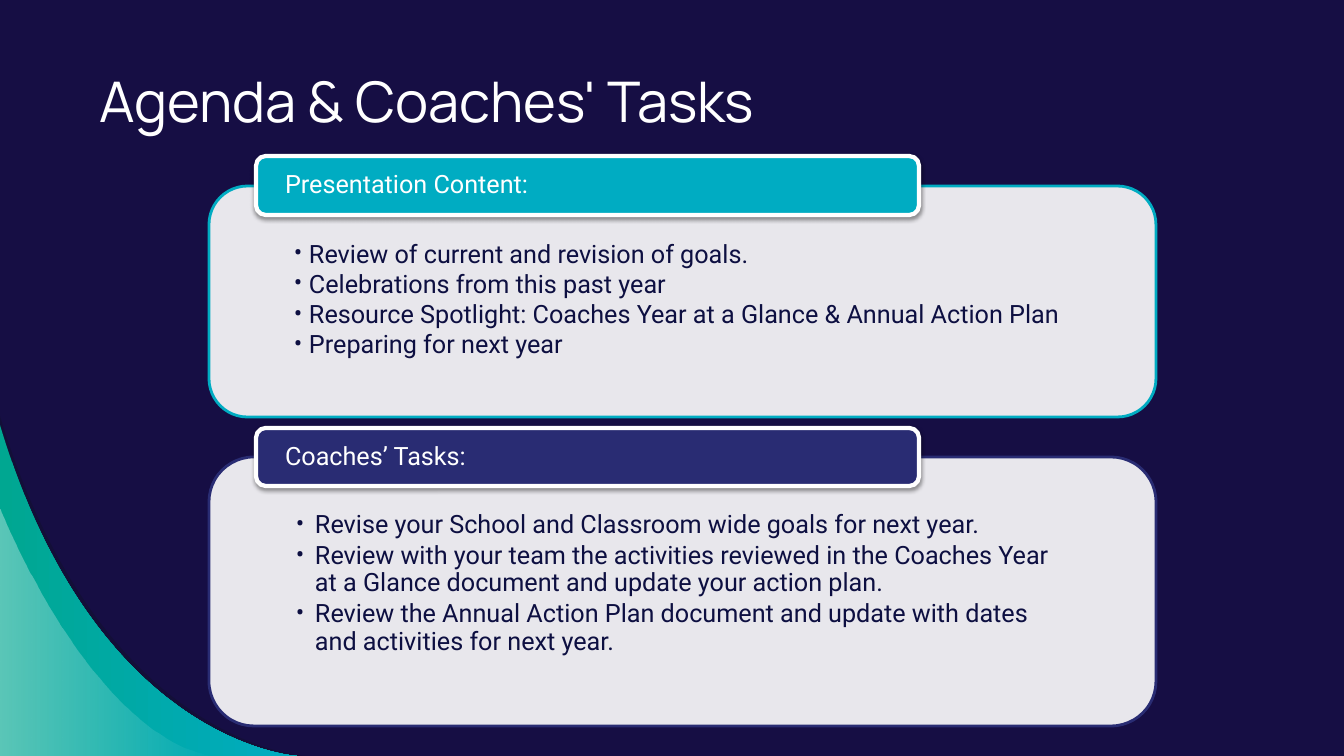
from dataclasses import dataclass
from typing import Any, NamedTuple

from lxml import etree
from pptx import Presentation
from pptx.dml.color import RGBColor
from pptx.enum.shapes import MSO_SHAPE
from pptx.enum.text import MSO_ANCHOR, PP_ALIGN
from pptx.oxml.ns import qn
from pptx.util import Emu, Pt

ROUNDED = MSO_SHAPE.ROUNDED_RECTANGLE
TOP, MIDDLE, BOTTOM = MSO_ANCHOR.TOP, MSO_ANCHOR.MIDDLE, MSO_ANCHOR.BOTTOM
LEFT = PP_ALIGN.LEFT
EMU_PER_PX = 914400 / 100.8


@dataclass(frozen=True)
class Theme:
    background: str = "160E44"
    white: str = "FFFFFF"
    ink: str = "0D0F41"
    teal: str = "00ACC2"
    green: str = "00A791"
    indigo: str = "292C73"
    shade: str = "12102F"
    black: str = "000000"
    title_font: str = "Manrope"
    body_font: str = "Roboto"
    title_size: int = 40
    body_size: int = 18
    panel_line: int = 2
    header_line: int = 3


THEME = Theme()


class Box(NamedTuple):
    left: int
    top: int
    width: int
    height: int


class Stop(NamedTuple):
    color: str
    alpha: int = 100


class Swoosh(NamedTuple):
    curve: tuple[tuple[int, int], ...]
    stops: tuple[Stop, ...]


class TextStyle(NamedTuple):
    font: str
    size: int
    color: str
    insets: tuple[int, int, int, int]
    anchor: Any
    spacing: float = 1.0
    after: float = 0
    hanging: int = 0


class Panel(NamedTuple):
    accent: str
    frame: Box
    header: Box
    heading: str
    header_text: Box
    body_text: Box
    body_style: TextStyle
    items: tuple[str, ...]


TITLE = TextStyle(THEME.title_font, THEME.title_size, THEME.white, (10, 10, 10, 10), BOTTOM)
HEADING = TextStyle(THEME.body_font, THEME.body_size, THEME.white, (25, 0, 25, 0), MIDDLE, 0.9)
CONTENT = TextStyle(THEME.body_font, THEME.body_size, THEME.ink, (73, 41, 73, 14), TOP, hanging=15)
TASKS = CONTENT._replace(spacing=0.9, after=2.7, hanging=19)

SWOOSHES = (
    Swoosh(((0, 416), (99, 745), (305, 756), (305, 756)), (Stop(THEME.shade, 54),)),
    Swoosh(((0, 425), (96, 745), (297, 756), (297, 756)), (Stop(THEME.green), Stop(THEME.teal))),
    Swoosh(((0, 510), (0, 510), (92, 741), (218, 756)), (Stop(THEME.white, 36), Stop(THEME.white, 0))),
)

PANELS = (
    Panel(
        THEME.teal, Box(209, 186, 947, 231), Box(256, 156, 663, 59),
        "Presentation Content:", Box(260, 159, 657, 53), Box(221, 197, 924, 209), CONTENT,
        (
            "Review of current and revision of goals.",
            "Celebrations from this past year",
            "Resource Spotlight: Coaches Year at a Glance & Annual Action Plan",
            "Preparing for next year",
        ),
    ),
    Panel(
        THEME.indigo, Box(209, 457, 947, 269), Box(256, 428, 663, 58),
        "Coaches’ Tasks:", Box(260, 431, 657, 53), Box(223, 471, 920, 243), TASKS,
        (
            "Revise your School and Classroom wide goals for next year.",
            "Review with your team the activities reviewed in the Coaches Year "
            "at a Glance document and update your action plan.",
            "Review the Annual Action Plan document and update with dates "
            "and activities for next year.",
        ),
    ),
)


def px(n: float) -> Emu:
    return Emu(round(n * EMU_PER_PX))


def rgb(color: str) -> RGBColor:
    return RGBColor.from_string(color)


def apply(target: Any, values: dict[str, Any]) -> None:
    for name, value in values.items():
        setattr(target, name, value)


def add_alpha(color_element: Any, percent: int) -> None:
    etree.SubElement(color_element, qn("a:alpha"), val=str(percent * 1000))


def paint(sp: Any, stops: tuple[Stop, ...]) -> None:
    fill = sp.fill
    if len(stops) == 1:
        fill.solid()
        fill.fore_color.rgb = rgb(stops[0].color)
        kind = "a:solidFill"
    else:
        fill.gradient()
        fill.gradient_angle = 0
        for gradient_stop, stop in zip(fill.gradient_stops, stops):
            gradient_stop.color.rgb = rgb(stop.color)
        kind = "a:gradFill"
    colors = sp._element.spPr.find(qn(kind)).iter(qn("a:srgbClr"))
    for color_element, stop in zip(list(colors), stops):
        if stop.alpha < 100:
            add_alpha(color_element, stop.alpha)
    sp.shadow.inherit = False


def add_swoosh(s: Any, swoosh: Swoosh) -> None:
    corner = (swoosh.curve[0][0], swoosh.curve[-1][1])
    start, *points = [(px(x), px(y)) for x, y in (*swoosh.curve, corner)]
    builder = s.shapes.build_freeform(*start, scale=1.0)
    builder.add_line_segments(points, close=True)
    sp = builder.convert_to_shape()
    segments = list(sp._element.iter(qn("a:lnTo")))[:3]
    bezier = etree.Element(qn("a:cubicBezTo"))
    segments[0].addprevious(bezier)
    for segment in segments:
        bezier.append(segment[0])
        segment.getparent().remove(segment)
    paint(sp, swoosh.stops)
    sp.line.fill.background()


def add_card(s: Any, box: Box, fill: Stop, line: str, width: int) -> Any:
    sp = s.shapes.add_shape(ROUNDED, *map(px, box))
    paint(sp, (fill,))
    sp.line.color.rgb = rgb(line)
    sp.line.width = Pt(width)
    return sp


def add_drop_shadow(sp: Any) -> None:
    effects = sp._element.spPr.find(qn("a:effectLst"))
    shadow = etree.SubElement(
        effects, qn("a:outerShdw"), blurRad=str(Pt(3.1)), dist=str(Pt(1.6)), dir="5400000", rotWithShape="0"
    )
    add_alpha(etree.SubElement(shadow, qn("a:srgbClr"), val=THEME.black), 38)


def add_bullet(p: Any, style: TextStyle) -> None:
    pPr = p._p.get_or_add_pPr()
    pPr.set("marL", str(px(style.hanging)))
    pPr.set("indent", str(-px(style.hanging)))
    etree.SubElement(pPr, qn("a:buFont"), typeface=style.font)
    etree.SubElement(pPr, qn("a:buChar"), char="•")


def add_text(s: Any, box: Box, lines: tuple[str, ...], style: TextStyle) -> None:
    tf = s.shapes.add_textbox(*map(px, box)).text_frame
    sides = ("margin_left", "margin_top", "margin_right", "margin_bottom")
    apply(tf, {"word_wrap": True, "vertical_anchor": style.anchor, **dict(zip(sides, map(px, style.insets)))})
    for i, line in enumerate(lines):
        p = tf.add_paragraph() if i else tf.paragraphs[0]
        apply(p, {"alignment": LEFT, "line_spacing": style.spacing, "space_after": Pt(style.after)})
        if style.hanging:
            add_bullet(p, style)
        r = p.add_run()
        r.text = line
        apply(r.font, {"name": style.font, "size": Pt(style.size)})
        r.font.color.rgb = rgb(style.color)


def add_panel(s: Any, panel: Panel) -> None:
    add_card(s, panel.frame, Stop(THEME.white, 90), panel.accent, THEME.panel_line)
    add_text(s, panel.body_text, panel.items, panel.body_style)
    add_drop_shadow(add_card(s, panel.header, Stop(panel.accent), THEME.white, THEME.header_line))
    add_text(s, panel.header_text, (panel.heading,), HEADING)


def main() -> None:
    prs = Presentation()
    apply(prs, {"slide_width": px(1344), "slide_height": px(756)})
    s = prs.slides.add_slide(prs.slide_layouts[6])
    s.background.fill.solid()
    s.background.fill.fore_color.rgb = rgb(THEME.background)
    for swoosh in SWOOSHES:
        add_swoosh(s, swoosh)
    for panel in PANELS:
        add_panel(s, panel)
    add_text(s, Box(89, 51, 1034, 93), ("Agenda & Coaches' Tasks",), TITLE)
    prs.save("out.pptx")


if __name__ == "__main__":
    main()
